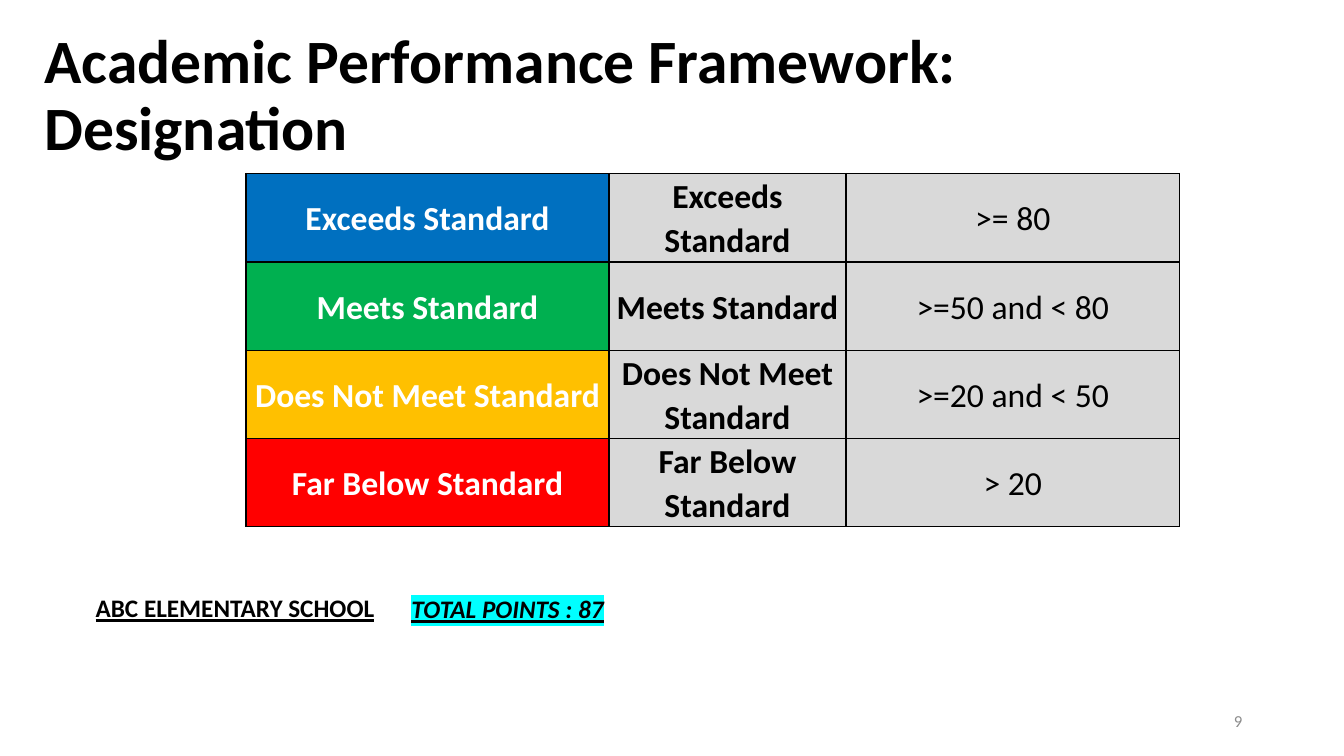
"""Build the academic performance designation slide."""
from lxml import etree
from pptx import Presentation
from pptx.dml.color import RGBColor
from pptx.enum.text import MSO_ANCHOR, MSO_AUTO_SIZE, PP_ALIGN
from pptx.oxml.ns import qn
from pptx.util import Pt

PX = 9144
FONT = "Calibri"
LEFT, CENTER, RIGHT = PP_ALIGN.LEFT, PP_ALIGN.CENTER, PP_ALIGN.RIGHT
MIDDLE, TOP = MSO_ANCHOR.MIDDLE, MSO_ANCHOR.TOP
NO_FIT = MSO_AUTO_SIZE.NONE

BLACK = RGBColor(0x00, 0x00, 0x00)
WHITE = RGBColor(0xFF, 0xFF, 0xFF)
GRAY = RGBColor(0x8C, 0x8C, 0x8C)
LIGHT_GRAY = RGBColor(0xD9, 0xD9, 0xD9)
BLUE = RGBColor(0x00, 0x70, 0xC0)
GREEN = RGBColor(0x00, 0xB0, 0x50)
AMBER = RGBColor(0xFF, 0xC0, 0x00)
RED = RGBColor(0xFF, 0x00, 0x00)
CYAN = RGBColor(0x00, 0xFF, 0xFF)

COLUMN_WIDTHS = (360, 235, 331)
ROW_HEIGHTS = (88, 88, 86, 79)
DESIGNATIONS = (
    ("Exceeds Standard", ">= 80", BLUE),
    ("Meets Standard", ">=50 and < 80", GREEN),
    ("Does Not Meet Standard", ">=20 and < 50", AMBER),
    ("Far Below Standard", "> 20", RED),
)


def px(*lengths):
    """Turn px lengths into EMU."""
    return [length * PX for length in lengths]


def write(frame, text, size, color=BLACK, bold=False, italic=False,
          underline=False, align=LEFT, spacing=1.0, highlight=None):
    """Write one formatted paragraph into a text frame."""
    paragraph = frame.paragraphs[0]
    paragraph.alignment = align
    paragraph.line_spacing = spacing
    run = paragraph.add_run()
    run.text = text
    font = run.font
    font.name, font.size, font.bold = FONT, Pt(size), bold
    font.italic, font.underline = italic, underline
    font.color.rgb = color
    if highlight is not None:
        marker = etree.Element(qn("a:highlight"))
        etree.SubElement(marker, qn("a:srgbClr"), val=str(highlight))
        run.font._element.find(qn("a:latin")).addprevious(marker)


def add_title(slide, text, box):
    """Place and fill the title placeholder."""
    title = slide.shapes.title
    title.left, title.top, title.width, title.height = px(*box)
    frame = title.text_frame
    frame.auto_size = NO_FIT
    frame.vertical_anchor = MIDDLE
    write(frame, text, 44, bold=True, spacing=0.9)


def add_label(slide, text, box, size, anchor=MIDDLE, wrap=True, bottom=5,
              **style):
    """Add a text box holding one paragraph."""
    frame = slide.shapes.add_textbox(*px(*box)).text_frame
    frame.word_wrap = wrap
    frame.vertical_anchor = anchor
    frame.margin_bottom = bottom * PX
    write(frame, text, size, **style)


def add_borders(cell):
    """Draw a thin black line on all four sides of a cell."""
    properties = cell._tc.get_or_add_tcPr()
    for side in ("lnL", "lnR", "lnT", "lnB"):
        line = etree.SubElement(properties, qn(f"a:{side}"), w=str(Pt(1)))
        fill = etree.SubElement(line, qn("a:solidFill"))
        etree.SubElement(fill, qn("a:srgbClr"), val=str(BLACK))


def fill_cell(cell, text, background, color=BLACK, bold=True):
    """Format one cell and write its text."""
    add_borders(cell)
    cell.fill.solid()
    cell.fill.fore_color.rgb = background
    cell.vertical_anchor = MIDDLE
    cell.margin_left = cell.margin_right = 7 * PX
    cell.margin_top = cell.margin_bottom = 0
    write(cell.text_frame, text, 24, color=color, bold=bold, align=CENTER,
          spacing=1.07)


def add_designation_table(slide, left, top):
    """Add the table of designations and their point ranges."""
    table = slide.shapes.add_table(
        len(ROW_HEIGHTS), len(COLUMN_WIDTHS),
        *px(left, top, sum(COLUMN_WIDTHS), sum(ROW_HEIGHTS))).table
    table.first_row = table.horz_banding = False
    for column, width in zip(table.columns, COLUMN_WIDTHS):
        column.width = width * PX
    for row, height, (standard, points, color) in zip(
            table.rows, ROW_HEIGHTS, DESIGNATIONS):
        row.height = height * PX
        badge, name, score = row.cells
        fill_cell(badge, standard, color, color=WHITE)
        fill_cell(name, standard, LIGHT_GRAY)
        fill_cell(score, points, LIGHT_GRAY, bold=False)


def main():
    """Build and save the slide."""
    deck = Presentation()
    deck.slide_width, deck.slide_height = px(1333, 750)
    slide = deck.slides.add_slide(deck.slide_layouts[5])
    add_title(slide, "Academic Performance Framework: Designation",
              (34, 24, 1150, 145))
    add_designation_table(slide, 244, 172)
    add_label(slide, "9", (942, 695, 300, 40), 12, color=GRAY, align=RIGHT)
    add_label(slide, "TOTAL POINTS : 87", (397, 584, 213, 40), 18, anchor=TOP,
              wrap=False, bold=True, italic=True, underline=True,
              align=CENTER, highlight=CYAN)
    add_label(slide, "ABC ELEMENTARY SCHOOL", (85, 565, 318, 100), 18,
              bottom=25, bold=True, underline=True, spacing=0.9)
    deck.save("out.pptx")


if __name__ == "__main__":
    main()
